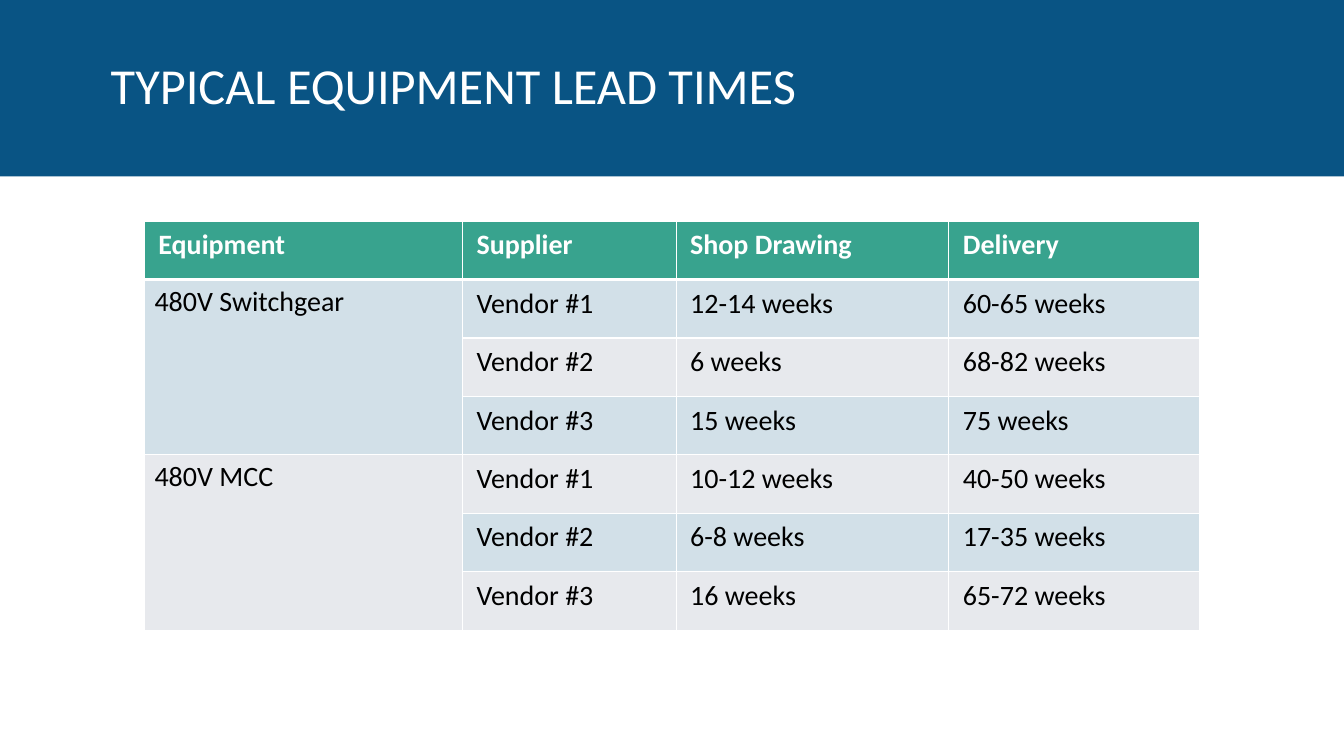
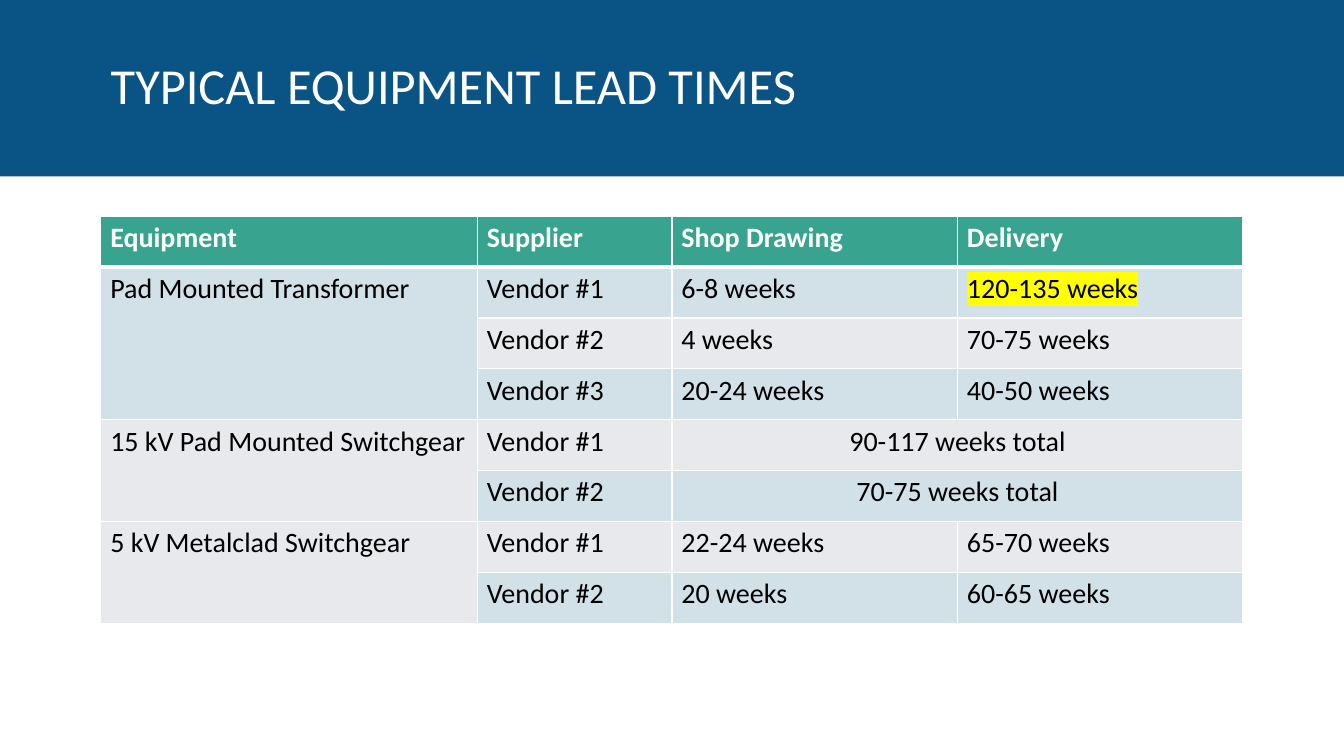
from lxml import etree
from pptx import Presentation
from pptx.dml.color import RGBColor
from pptx.enum.shapes import MSO_SHAPE
from pptx.enum.text import MSO_ANCHOR, PP_ALIGN
from pptx.oxml.ns import qn
from pptx.util import Pt

RECTANGLE = MSO_SHAPE.RECTANGLE
TOP, MIDDLE = MSO_ANCHOR.TOP, MSO_ANCHOR.MIDDLE
LEFT, CENTER = PP_ALIGN.LEFT, PP_ALIGN.CENTER

BLUE = RGBColor(0x09, 0x54, 0x84)
GREEN = RGBColor(0x38, 0xA3, 0x8E)
GREY = RGBColor(0xE7, 0xE9, 0xED)
WHITE = RGBColor(0xFF, 0xFF, 0xFF)
BLACK = RGBColor(0x00, 0x00, 0x00)
YELLOW = RGBColor(0xFF, 0xFF, 0x00)

FONT = "Calibri"
SLIDE_WIDTH, SLIDE_HEIGHT = Pt(960), Pt(540)
BAND_HEIGHT = Pt(126)
BAND_OPACITY = 18  # percent, for the tinted table rows
THIN, THICK = Pt(1), Pt(3)

TITLE = "TYPICAL EQUIPMENT LEAD TIMES"
HEADINGS = ("Equipment", "Supplier", "Shop Drawing", "Delivery")

# Equipment, then (shop drawing, delivery) per vendor; a lone value is a total
LOW_VOLTAGE = [
    ("480V Switchgear", [("12-14 weeks", "60-65 weeks"),
                         ("6 weeks", "68-82 weeks"),
                         ("15 weeks", "75 weeks")]),
    ("480V MCC", [("10-12 weeks", "40-50 weeks"),
                  ("6-8 weeks", "17-35 weeks"),
                  ("16 weeks", "65-72 weeks")]),
]
MEDIUM_VOLTAGE = [
    ("Pad Mounted Transformer", [("6-8 weeks", "120-135 weeks"),
                                 ("4 weeks", "70-75 weeks"),
                                 ("20-24 weeks", "40-50 weeks")]),
    ("15 kV Pad Mounted Switchgear", [("90-117 weeks total",),
                                      ("70-75 weeks total",)]),
    ("5 kV Metalclad Switchgear", [("22-24 weeks", "65-70 weeks"),
                                   ("20 weeks", "60-65 weeks")]),
]
LONGEST_DELIVERY = "120-135 weeks"


def add_run(paragraph, text, size, color, bold=False):
    run = paragraph.add_run()
    run.text = text
    run.font.size = Pt(size)
    run.font.name = FONT
    run.font.bold = bold
    run.font.color.rgb = color
    return run


def highlight(run, color):
    mark = etree.Element(qn("a:highlight"))
    etree.SubElement(mark, qn("a:srgbClr"), val=str(color))
    run.font._element.find(qn("a:solidFill")).addnext(mark)


def add_titled_slide(prs):
    """Blank slide with the blue band and the title."""
    slide = prs.slides.add_slide(prs.slide_layouts[6])
    band = slide.shapes.add_shape(RECTANGLE, 0, 0, SLIDE_WIDTH, BAND_HEIGHT)
    band.shadow.inherit = False
    band.fill.solid()
    band.fill.fore_color.rgb = BLUE
    band.line.fill.background()

    title = slide.shapes.add_textbox(Pt(72), Pt(27), Pt(816), Pt(72))
    frame = title.text_frame
    frame.word_wrap = True
    frame.vertical_anchor = MIDDLE
    paragraph = frame.paragraphs[0]
    paragraph.line_spacing = 0.9
    add_run(paragraph, TITLE, 36, WHITE)
    return slide


def fill_cell(cell, color, opacity=100):
    cell.fill.solid()
    cell.fill.fore_color.rgb = color
    if opacity < 100:
        rgb = cell._tc.tcPr.find(qn("a:solidFill")).find(qn("a:srgbClr"))
        etree.SubElement(rgb, qn("a:alpha"), val=str(opacity * 1000))


def border_cell(cell, top=THIN, bottom=THIN):
    # Borders stand before the fill in the cell properties
    sides = (("a:lnL", THIN), ("a:lnR", THIN), ("a:lnT", top), ("a:lnB", bottom))
    for position, (tag, width) in enumerate(sides):
        line = etree.Element(qn(tag), w=str(int(width)))
        fill = etree.SubElement(line, qn("a:solidFill"))
        etree.SubElement(fill, qn("a:srgbClr"), val=str(WHITE))
        cell._tc.tcPr.insert(position, line)


def write_cell(cell, text, inset, color=BLACK, bold=False, align=LEFT):
    cell.margin_left = cell.margin_right = Pt(inset)
    cell.margin_top = cell.margin_bottom = Pt(inset / 2)
    cell.vertical_anchor = TOP
    paragraph = cell.text_frame.paragraphs[0]
    paragraph.alignment = align
    run = add_run(paragraph, text, 20, color, bold)
    if text == LONGEST_DELIVERY:
        highlight(run, YELLOW)


def style_row(table, row):
    """Green header, then tinted and grey rows in turn."""
    for column in range(len(HEADINGS)):
        cell = table.cell(row, column)
        if row == 0:
            fill_cell(cell, GREEN)
        elif row % 2:
            fill_cell(cell, BLUE, BAND_OPACITY)
        else:
            fill_cell(cell, GREY)
        border_cell(cell, top=THICK if row == 1 else THIN,
                    bottom=THICK if row == 0 else THIN)


def add_lead_times(slide, groups, left, top, widths, row_height, inset,
                   equipment_inset):
    row_count = 1 + sum(len(vendors) for _, vendors in groups)
    frame = slide.shapes.add_table(row_count, len(HEADINGS), Pt(left), Pt(top),
                                   Pt(sum(widths)), Pt(row_height * row_count))
    table = frame.table
    table.first_row = table.horz_banding = False
    for column, width in zip(table.columns, widths):
        column.width = Pt(width)
    for row, table_row in enumerate(table.rows):
        table_row.height = Pt(row_height)
        style_row(table, row)

    # Header
    for column, heading in enumerate(HEADINGS):
        write_cell(table.cell(0, column), heading, inset, WHITE, bold=True)

    # One merged equipment cell beside its vendors
    row = 1
    for equipment, vendors in groups:
        equipment_cell = table.cell(row, 0)
        equipment_cell.merge(table.cell(row + len(vendors) - 1, 0))
        write_cell(equipment_cell, equipment, equipment_inset)
        for number, times in enumerate(vendors, 1):
            write_cell(table.cell(row, 1), f"Vendor #{number}", inset)
            is_total = len(times) == 1
            if is_total:
                table.cell(row, 2).merge(table.cell(row, 3))
            for column, weeks in enumerate(times, 2):
                write_cell(table.cell(row, column), weeks, inset,
                           align=CENTER if is_total else LEFT)
            row += 1


def main():
    prs = Presentation()
    prs.slide_width, prs.slide_height = SLIDE_WIDTH, SLIDE_HEIGHT

    add_lead_times(add_titled_slide(prs), LOW_VOLTAGE, left=103.2, top=158,
                   widths=(227.2, 152.6, 194.8, 179.2), row_height=41.75,
                   inset=10, equipment_inset=7.2)
    add_lead_times(add_titled_slide(prs), MEDIUM_VOLTAGE, left=72, top=154.4,
                   widths=(269, 139, 204, 204), row_height=36.35,
                   inset=6.8, equipment_inset=6.8)

    prs.save("out.pptx")


if __name__ == "__main__":
    main()
